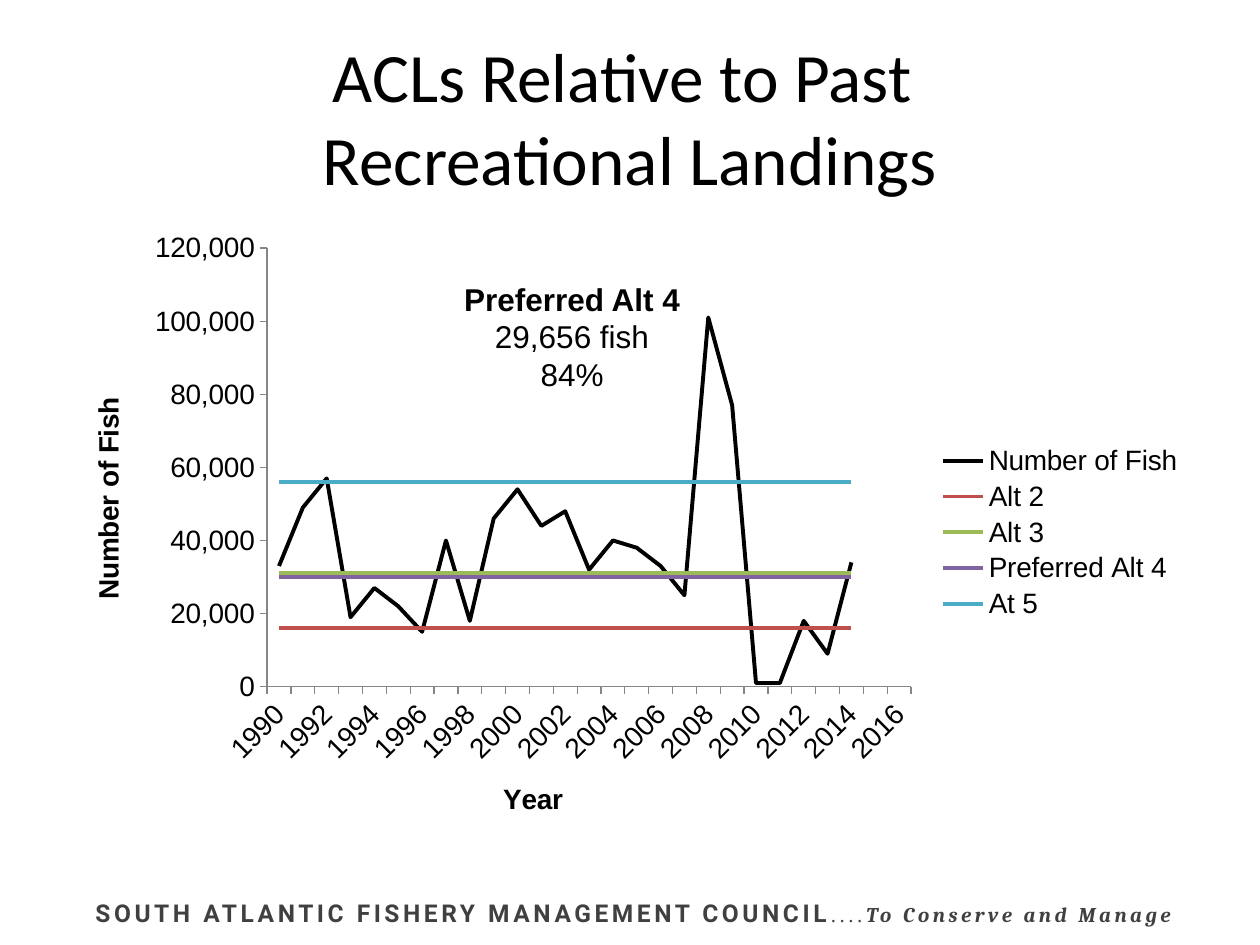
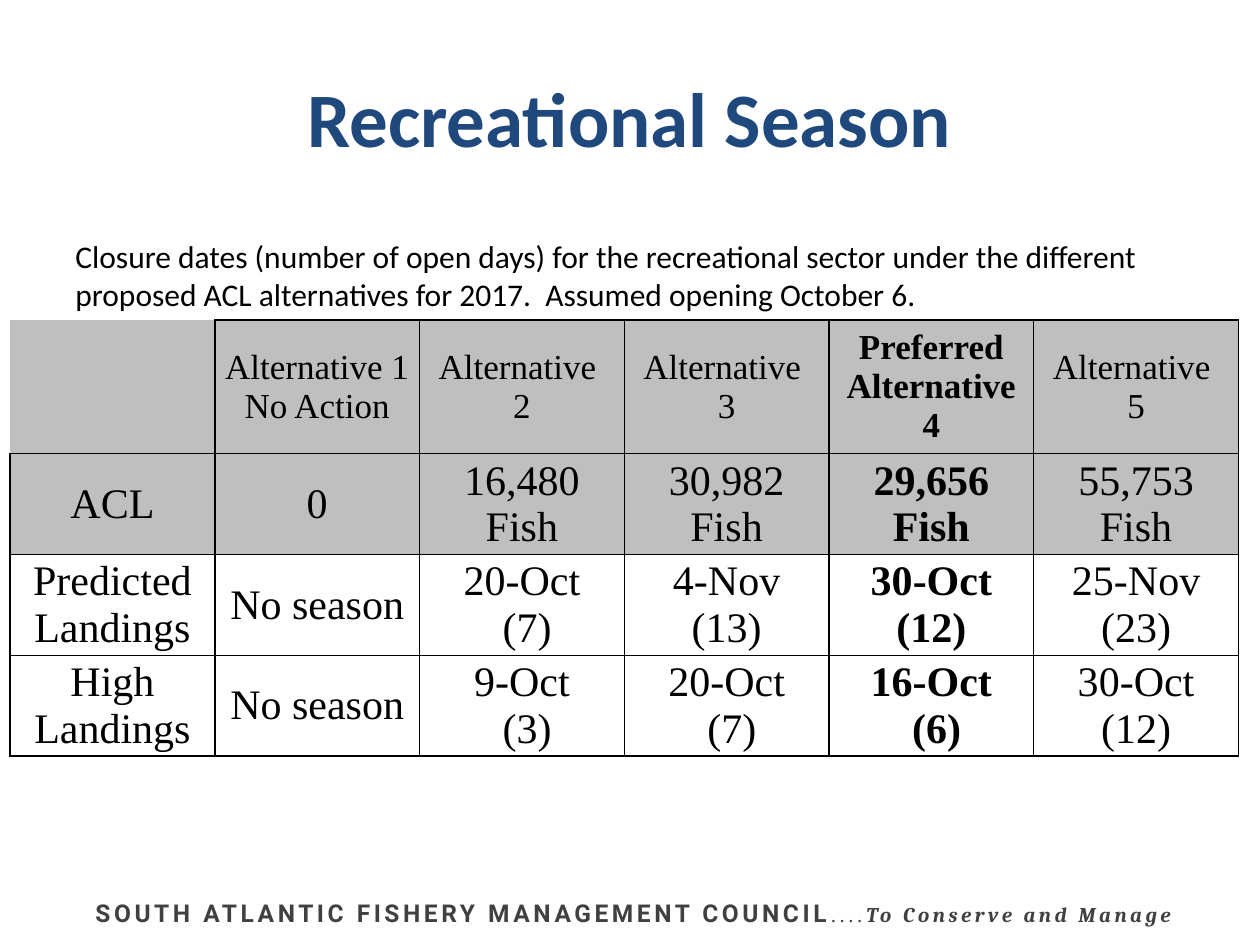
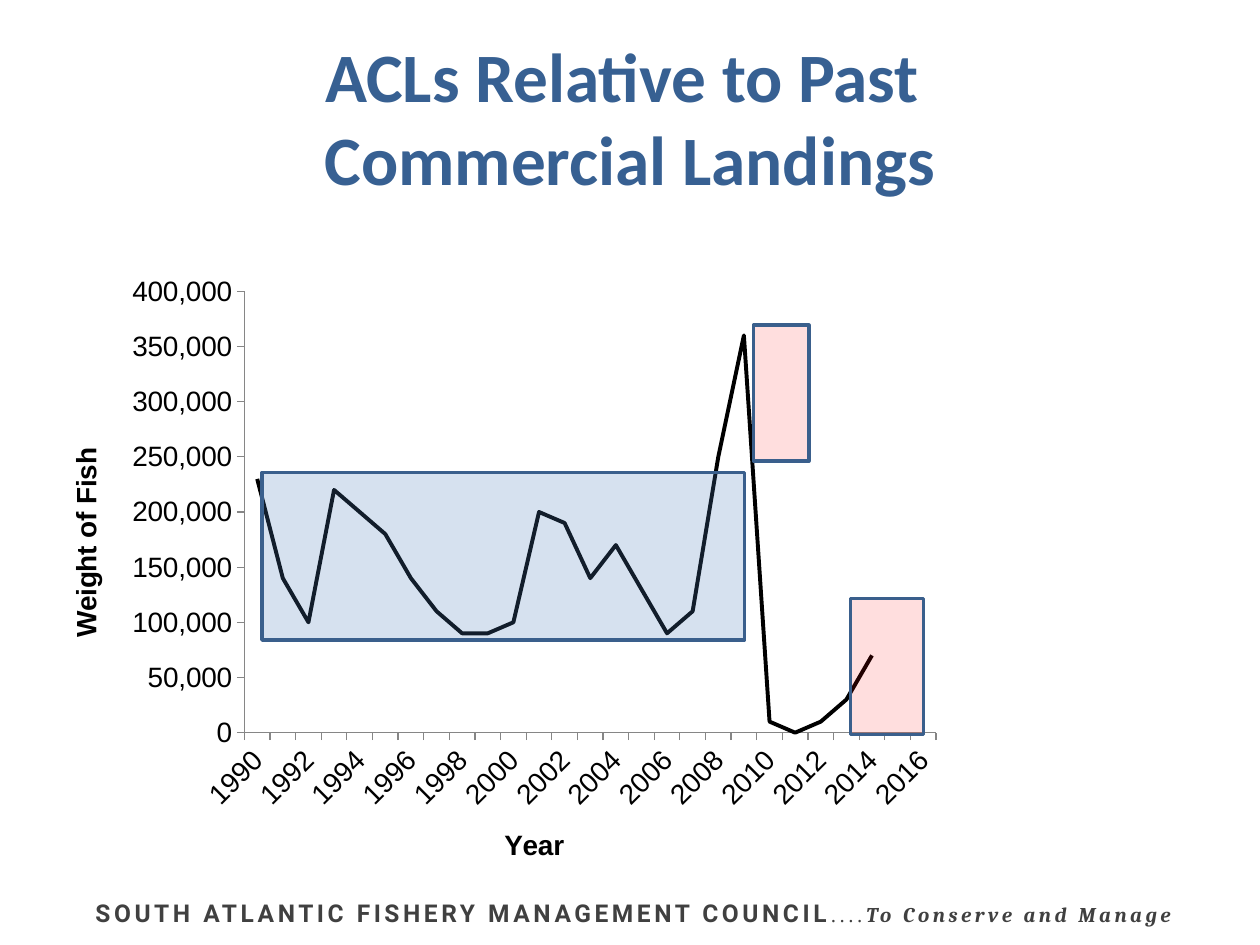
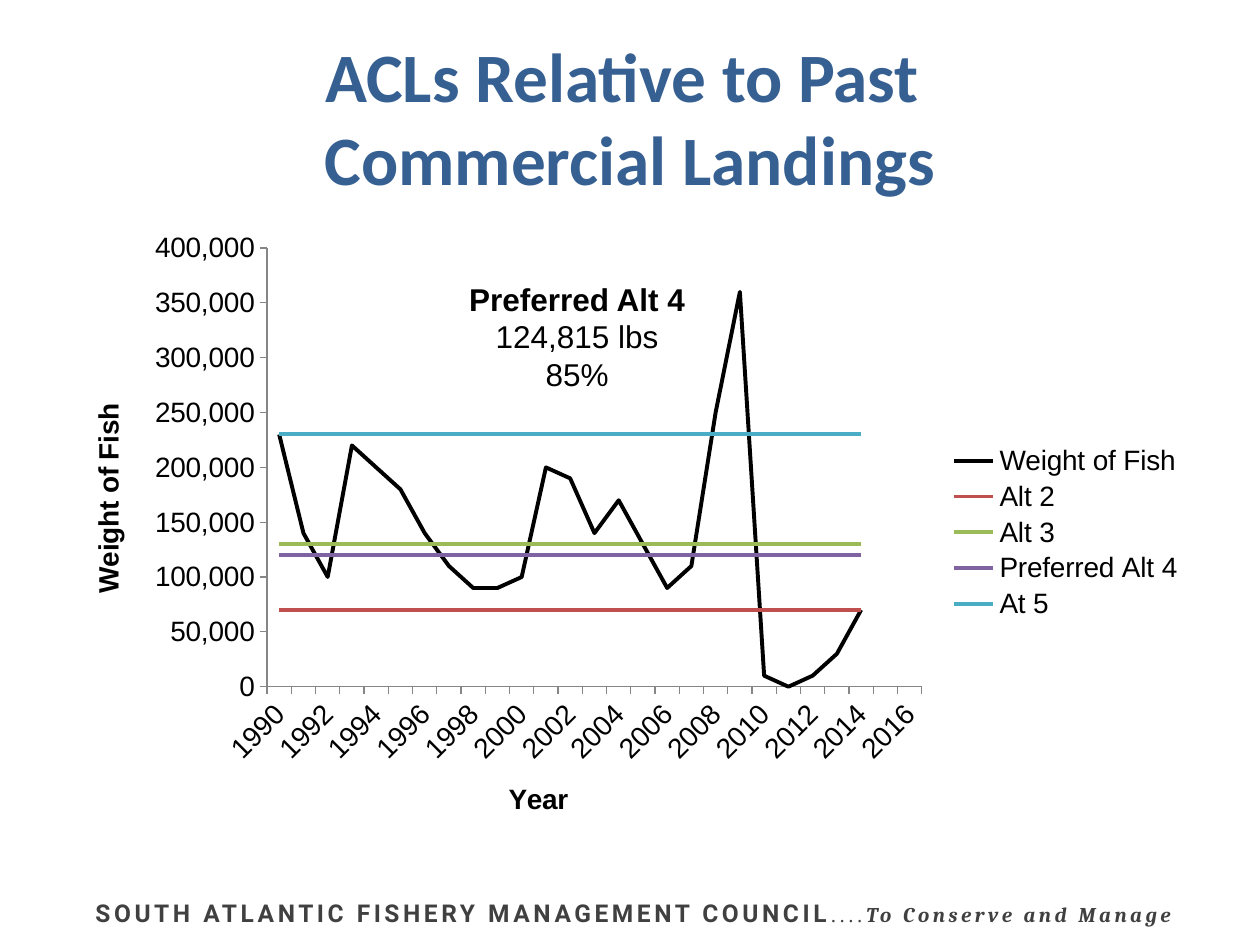
from lxml import etree
from pptx import Presentation
from pptx import util as u
from pptx.chart.data import CategoryChartData
from pptx.dml.color import RGBColor
from pptx.enum import chart as charts
from pptx.enum import shapes, text
from pptx.oxml.ns import qn

PX = 9144  # 100 px to the inch
COLOURS = {
    "black": "000000", "footer": "404040", "navy": "1F497D", "blue": "376092",
    "header": "BFBFBF", "axis": "868686", "outline": "3A5F8C",
    "past range": "4F81BD", "outlier": "FF0000",
    "alt 2": "C0504D", "alt 3": "9BBB59", "alt 4": "8064A2", "alt 5": "4BACC6",
}
ALTERNATIVES = {"Alt 2": "alt 2", "Alt 3": "alt 3", "Preferred Alt 4": "alt 4", "At 5": "alt 5"}
YEARS = [str(year) for year in range(1990, 2017)]
THOUSAND_FISH = [33, 49, 57, 19, 27, 22, 15, 40, 18, 46, 54, 44, 48, 32, 40, 38, 33,
                 25, 101, 77, 1, 1, 18, 9, 34]
THOUSAND_POUNDS = [230, 140, 100, 220, 200, 180, 140, 110, 90, 90, 100, 200, 190, 140,
                   170, 130, 90, 110, 250, 360, 10, 0, 10, 30, 70]
FISH_LIMITS = [16, 31, 30, 56]
POUND_LIMITS = [70, 130, 120, 230]

PLAIN_TITLE = {"size": 39.6, "name": "Calibri", "colour": "black"}
BLUE_TITLE = {**PLAIN_TITLE, "colour": "blue", "bold": True}
SEASON_TITLE = {"size": 44, "name": "Calibri", "colour": "navy", "bold": True}
BODY = {"size": 18, "name": "Calibri", "colour": "black"}
NOTE = {**BODY, "name": "Arial"}
CHART_TEXT = {**NOTE, "size": 16, "bold": False}
TABLE_TEXT = {"name": "Times New Roman", "colour": "black"}
FOOTER_RUNS = [
    ("SOUTH ATLANTIC FISHERY MANAGEMENT COUNCIL", {"size": 14, "name": "Roboto", "bold": True}),
    ("....", {"size": 12, "name": "Times New Roman"}),
    ("To Conserve and Manage", {"size": 12, "name": "Cambria", "bold": True, "italic": True}),
]
COMMERCIAL_TITLE = "ACLs Relative to Past \vCommercial Landings"
SEASON_ROWS = [
    ["", "Alternative 1\nNo Action", "Alternative \n2", "Alternative \n3",
     "Preferred\nAlternative 4", "Alternative \n5"],
    ["ACL", "0", "16,480 Fish", "30,982 Fish", "29,656 Fish", "55,753 Fish"],
    ["Predicted Landings", "No season", "20-Oct\n (7)", "4-Nov (13)", "30-Oct (12)",
     "25-Nov (23)"],
    ["High Landings", "No season", "9-Oct\n (3)", "20-Oct\n (7)", "16-Oct\n (6)",
     "30-Oct (12)"],
]
PREFERRED_COLUMN = 4


def rgb(colour):
    return RGBColor.from_string(COLOURS[colour])


def set_font(font, values):
    """Apply a dict of format values; size is in points, colour is a key of COLOURS."""
    for name, value in values.items():
        if name == "colour":
            font.color.rgb = rgb(value)
        else:
            setattr(font, name, u.Pt(value) if name == "size" else value)


def fill_paragraphs(frame, lines, values, align=None):
    for index, line in enumerate(lines):
        paragraph = frame.paragraphs[0] if index == 0 else frame.add_paragraph()
        paragraph.text = line
        paragraph.alignment = align
        for run in paragraph.runs:
            set_font(run.font, values if index == 0 else {**values, **values_after(values)})


def values_after(values):
    """Only the first line of a note is bold; elsewhere weight is kept."""
    return {"bold": False} if values.get("name") == "Arial" else {}


def add_xml(parent, tag, **attributes):
    return etree.SubElement(parent, qn(tag), attributes)


class Deck:
    """Holds the presentation, the current slide and the shared look."""

    def __init__(self):
        self.presentation = Presentation()
        self.presentation.slide_width = 1000 * PX
        self.presentation.slide_height = 750 * PX
        self.slide = None

    def new_slide(self, title, values):
        self.slide = self.presentation.slides.add_slide(self.presentation.slide_layouts[6])
        self.footer()
        frame = self.text_box((50, 30, 900, 125), [title], values, text.PP_ALIGN.CENTER)
        frame.vertical_anchor = text.MSO_ANCHOR.MIDDLE

    def text_box(self, box, lines, values, align=None):
        frame = self.slide.shapes.add_textbox(*(n * PX for n in box)).text_frame
        frame.word_wrap = True
        fill_paragraphs(frame, lines, values, align)
        return frame

    def footer(self):
        paragraph = self.text_box((66, 708, 934, 34), [""], {}).paragraphs[0]
        for words, values in FOOTER_RUNS:
            run = paragraph.add_run()
            run.text = words
            set_font(run.font, {**values, "colour": "footer"})
            run.font._element.set("spc", "200")

    def note(self, box, lines):
        self.text_box(box, lines, {**NOTE, "bold": True}, text.PP_ALIGN.CENTER)

    def highlight(self, box, colour, opacity):
        shape = self.slide.shapes.add_shape(shapes.MSO_SHAPE.RECTANGLE, *(n * PX for n in box))
        shape.shadow.inherit = False
        shape.fill.solid()
        shape.fill.fore_color.rgb = rgb(colour)
        fill_colour = shape._element.spPr.find(qn("a:solidFill"))[0]
        add_xml(fill_colour, "a:alpha", val=str(opacity * 1000))
        shape.line.color.rgb = rgb("outline")
        shape.line.width = u.Pt(2)

    def line_chart(self, box, series, value_title, top, step, plot=None):
        """series holds (name, colour, thousands); plot is the inner plot area in fractions."""
        data = CategoryChartData()
        data.categories = YEARS
        for name, _, thousands in series:
            gap = [None] * (len(YEARS) - len(thousands))
            data.add_series(name, [value * 1000 for value in thousands] + gap)
        chart = self.slide.shapes.add_chart(
            charts.XL_CHART_TYPE.LINE, *(n * PX for n in box), data).chart
        set_font(chart.font, CHART_TEXT)
        chart.has_title = False
        chart.has_legend = len(series) > 1
        if chart.has_legend:
            chart.legend.position = charts.XL_LEGEND_POSITION.RIGHT
            chart.legend.include_in_layout = False
        chart.plots[0].vary_by_categories = False
        for line, (_, colour, _) in zip(chart.plots[0].series, series):
            line.smooth = False
            line.marker.style = charts.XL_MARKER_STYLE.NONE
            line.format.line.color.rgb = rgb(colour)
            line.format.line.width = u.Pt(2.25)
        self.axes(chart, value_title, top, step)
        if plot:
            self.place_plot(chart, plot)

    def axes(self, chart, value_title, top, step):
        for axis, title in ((chart.category_axis, "Year"), (chart.value_axis, value_title)):
            axis.has_major_gridlines = False
            axis.major_tick_mark = charts.XL_TICK_MARK.OUTSIDE
            axis.format.line.color.rgb = rgb("axis")
            fill_paragraphs(axis.axis_title.text_frame, [title], {**CHART_TEXT, "bold": True})
            set_font(axis.tick_labels.font, CHART_TEXT)
        value_axis = chart.value_axis
        limits = {"minimum_scale": 0, "maximum_scale": top, "major_unit": step}
        for name, value in limits.items():
            setattr(value_axis, name, value)
        value_axis.tick_labels.number_format = "#,##0"
        value_axis.tick_labels.number_format_is_linked = False
        category = chart.category_axis._element
        category.find(qn("c:txPr")).find(qn("a:bodyPr")).set("rot", "-2700000")
        skip = etree.Element(qn("c:tickLblSkip"), val="2")
        category.find(qn("c:noMultiLvlLbl")).addprevious(skip)

    def place_plot(self, chart, plot):
        area = chart._chartSpace.chart.plotArea
        for old in area.findall(qn("c:layout")):
            area.remove(old)
        layout = etree.Element(qn("c:layout"))
        area.insert(0, layout)
        manual = add_xml(layout, "c:manualLayout")
        add_xml(manual, "c:layoutTarget", val="inner")
        for name in "xy":
            add_xml(manual, f"c:{name}Mode", val="edge")
        for name, value in zip("xywh", plot):
            add_xml(manual, f"c:{name}", val=str(value))

    def table(self, box, rows, heights):
        table = self.slide.shapes.add_table(
            len(rows), len(rows[0]), *(n * PX for n in box)).table
        table.first_row = table.horz_banding = False
        for r, (row, height) in enumerate(zip(rows, heights)):
            table.rows[r].height = height * PX
            for c, words in enumerate(row):
                cell = table.cell(r, c)
                self.borders(cell, "RB" if r == c == 0 else "LRTB")
                self.table_cell(cell, words, r, c)

    def table_cell(self, cell, words, r, c):
        layout = {"margin_left": 7 * PX, "margin_right": 7 * PX, "margin_top": 0,
                  "margin_bottom": 0, "vertical_anchor": text.MSO_ANCHOR.MIDDLE}
        for name, value in layout.items():
            setattr(cell, name, value)
        if r < 2:
            cell.fill.solid()
            cell.fill.fore_color.rgb = rgb("header")
        else:
            cell.fill.background()
        values = {**TABLE_TEXT, "size": 24 if r else 20, "bold": c == PREFERRED_COLUMN}
        fill_paragraphs(cell.text_frame, words.split("\n"), values, text.PP_ALIGN.CENTER)

    def borders(self, cell, sides):
        properties = cell._tc.get_or_add_tcPr()
        for side in "LRTB":
            line = add_xml(properties, f"a:ln{side}", w=str(u.Pt(1)))
            if side in sides:
                add_xml(add_xml(line, "a:solidFill"), "a:srgbClr", val=COLOURS["black"])
            else:
                add_xml(line, "a:noFill")


def with_limits(name, landings, limits):
    """The landings line followed by one flat line for each catch limit."""
    flat = [(label, colour, [limit] * len(landings))
            for (label, colour), limit in zip(ALTERNATIVES.items(), limits)]
    return [(name, "black", landings)] + flat


def main():
    deck = Deck()
    limits_box = (50, 175, 900, 495)

    deck.new_slide("ACLs Relative to Past \vRecreational Landings", PLAIN_TITLE)
    deck.line_chart(limits_box, with_limits("Number of Fish", THOUSAND_FISH, FISH_LIMITS),
                    "Number of Fish", 120000, 20000)
    deck.note((350, 217, 208, 101), ["Preferred Alt 4", "29,656 fish", "84%"])

    deck.new_slide("Recreational Season", SEASON_TITLE)
    deck.text_box((50, 183, 925, 71), [
        "Closure dates (number of open days) for the recreational sector under the different "
        "proposed ACL alternatives for 2017.  Assumed opening October 6."], BODY)
    deck.table((8, 254, 975, 346), SEASON_ROWS, [106, 80, 80, 80])

    deck.new_slide(COMMERCIAL_TITLE, BLUE_TITLE)
    deck.line_chart((50, 212, 900, 480), [("Series 1", "black", THOUSAND_POUNDS)],
                    "Weight of Fish", 400000, 50000, plot=(0.16, 0.04, 0.61, 0.73))
    deck.highlight((208, 375, 383, 133), "past range", 23)
    for box in ((675, 475, 58, 108), (598, 258, 44, 108)):
        deck.highlight(box, "outlier", 13)

    deck.new_slide(COMMERCIAL_TITLE, BLUE_TITLE)
    deck.line_chart(limits_box, with_limits("Weight of Fish", THOUSAND_POUNDS, POUND_LIMITS),
                    "Weight of Fish", 400000, 50000)
    deck.note((358, 217, 200, 101), ["Preferred Alt 4", "124,815 lbs", "85%"])

    deck.presentation.save("out.pptx")


if __name__ == "__main__":
    main()
